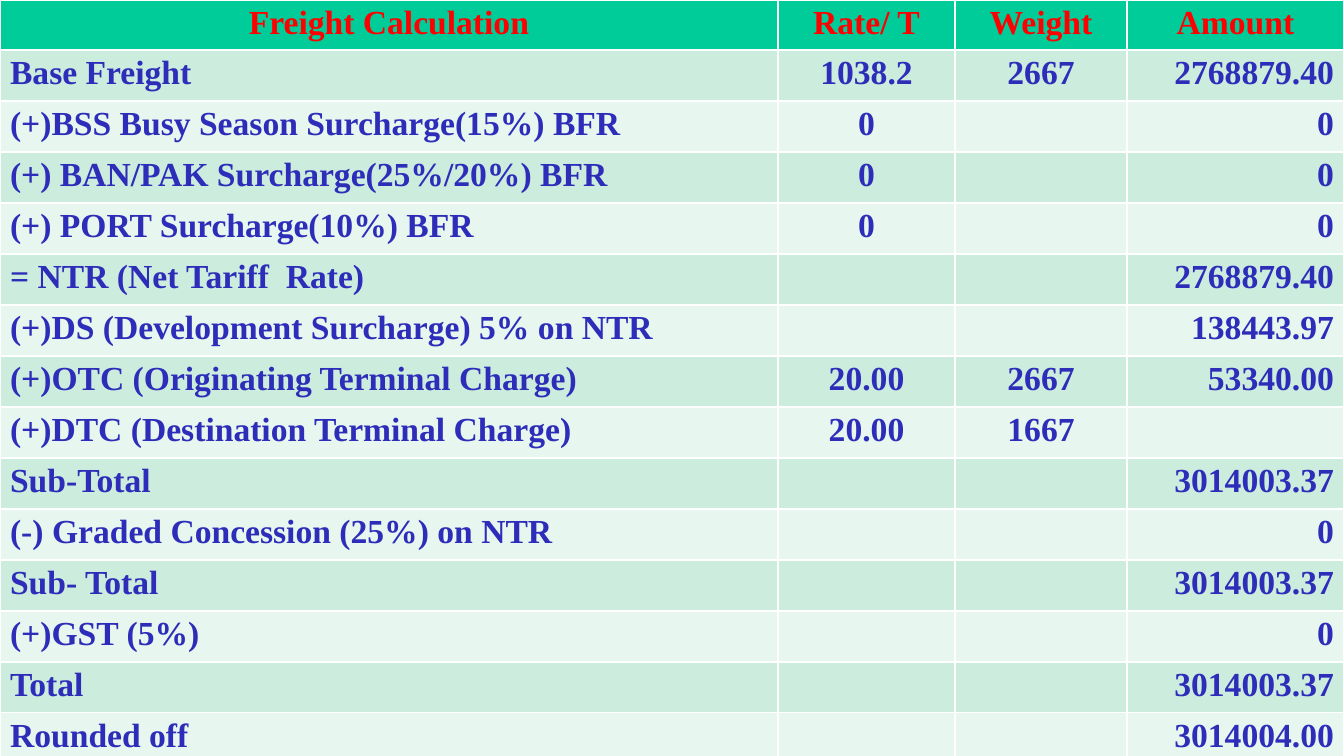
import pptx
import pptx.util
import pptx.dml.color
import pptx.enum.text

PX = 12192000 / 1344


def px(n):
    return pptx.util.Emu(round(n * PX))


def color(value):
    return pptx.dml.color.RGBColor.from_string(value)


prs = pptx.Presentation()
prs.slide_width, prs.slide_height = px(1344), px(756)
s = prs.slides.add_slide(prs.slide_layouts[6])

rows = [
    ("Freight Calculation", "Rate/ T", "Weight", "Amount"),
    ("Base Freight", "1038.2", "2667", "2768879.40"),
    ("(+)BSS Busy Season Surcharge(15%) BFR", "0", "", "0"),
    ("(+) BAN/PAK Surcharge(25%/20%) BFR", "0", "", "0"),
    ("(+) PORT Surcharge(10%) BFR", "0", "", "0"),
    ("= NTR (Net Tariff  Rate)", "", "", "2768879.40"),
    ("(+)DS (Development Surcharge) 5% on NTR", "", "", "138443.97"),
    ("(+)OTC (Originating Terminal Charge)", "20.00", "2667", "53340.00"),
    ("(+)DTC (Destination Terminal Charge)", "20.00", "1667", ""),
    ("Sub-Total", "", "", "3014003.37"),
    ("(-) Graded Concession (25%) on NTR", "", "", "0"),
    ("Sub- Total", "", "", "3014003.37"),
    ("(+)GST (5%)", "", "", "0"),
    ("Total", "", "", "3014003.37"),
    ("Rounded off", "", "", "3014004.00"),
]
widths = [778, 177, 172, 217]
heights = [50] + [51] * 13 + [42]
align = pptx.enum.text.PP_ALIGN
aligns = [align.LEFT, align.CENTER, align.CENTER, align.RIGHT]

table = s.shapes.add_table(len(rows), len(widths), 0, 0, px(sum(widths)), px(sum(heights))).table
for column, width in zip(table.columns, widths):
    column.width = px(width)

for i, (row, height) in enumerate(zip(rows, heights)):
    table.rows[i].height = px(height)
    header = i == 0
    fill = "00CC99" if header else "CCECDE" if i % 2 else "E7F6EF"
    for j, text in enumerate(row):
        cell = table.cell(i, j)
        cell.fill.solid()
        cell.fill.fore_color.rgb = color(fill)
        if not text:
            continue
        cell.text = text
        p = cell.text_frame.paragraphs[0]
        p.alignment = align.CENTER if header else aligns[j]
        p.font.name = "Times New Roman"
        p.font.size = pptx.util.Pt(24)
        p.font.bold = True
        p.font.color.rgb = color("FF0000" if header else "2D2DB9")

prs.save("out.pptx")
